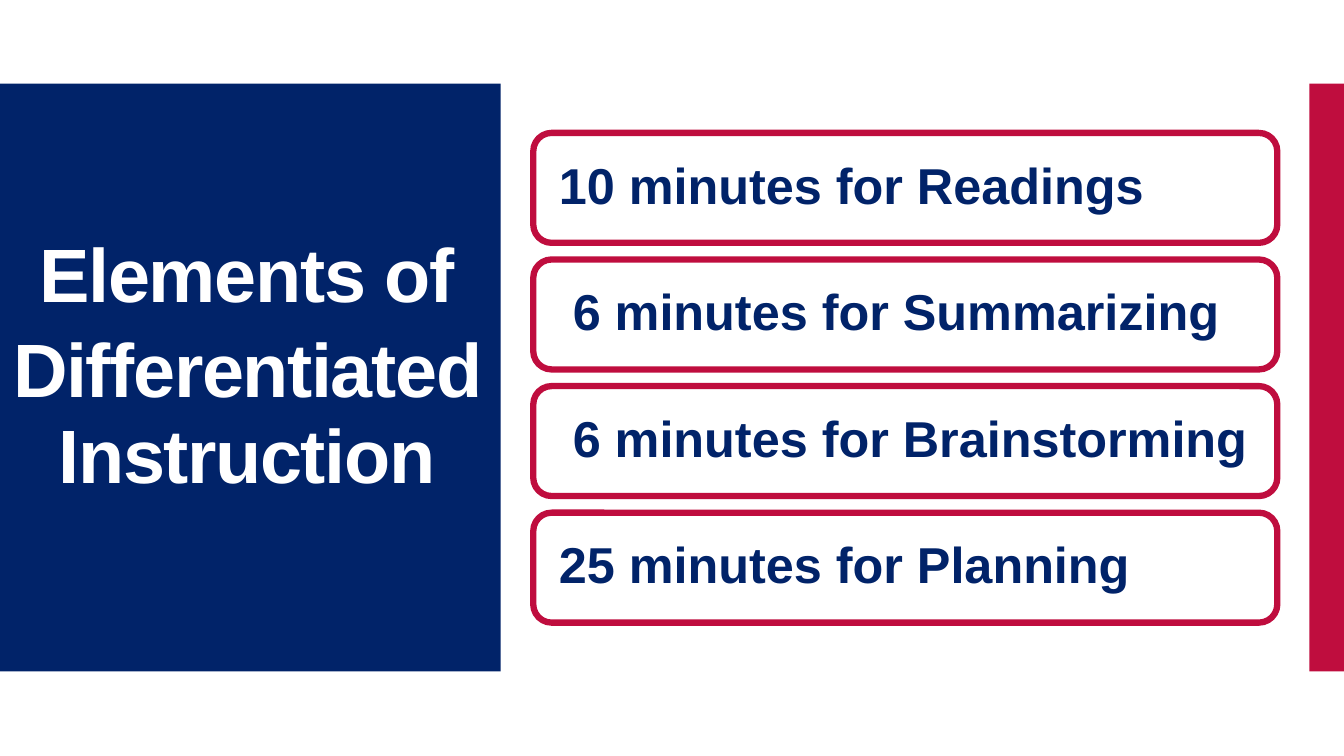
from pptx import Presentation
from pptx.dml.color import RGBColor
from pptx.enum.shapes import MSO_SHAPE as Shape
from pptx.enum.text import MSO_ANCHOR as Anchor, MSO_AUTO_SIZE as AutoSize, PP_ALIGN as Align
from pptx.util import Cm, Pt

NAVY = RGBColor(0x01, 0x23, 0x69)
RED = RGBColor(0xBF, 0x0D, 0x3E)
WHITE = RGBColor(0xFF, 0xFF, 0xFF)

TITLE_LINES = ["Elements of", "Differentiated Instruction"]
STEPS = [(10, "Readings"), (6, "Summarizing"), (6, "Brainstorming"), (25, "Planning")]

BAND_TOP, BAND_HEIGHT = 2.11, 14.81
CARD_LEFT, CARD_TOP, CARD_WIDTH, CARD_HEIGHT = 13.44, 3.35, 18.75, 2.77
CARD_PITCH = 3.19
CARD_INSET, SINGLE_DIGIT_INDENT = 0.51, 0.35


def add_block(page, kind, left, top, width, height, fill):
    block = page.shapes.add_shape(kind, Cm(left), Cm(top), Cm(width), Cm(height))
    block.shadow.inherit = False
    block.fill.solid()
    block.fill.fore_color.rgb = fill
    block.line.fill.background()
    return block


def format_para(para, size, color, align, spacing):
    para.alignment = align
    para.line_spacing = spacing
    for span in para.runs:
        span.font.name = "Arial"
        span.font.size = Pt(size)
        span.font.bold = True
        span.font.color.rgb = color


def add_card(page, row, minutes, task):
    card = add_block(page, Shape.ROUNDED_RECTANGLE, CARD_LEFT, CARD_TOP + row * CARD_PITCH,
                     CARD_WIDTH, CARD_HEIGHT, WHITE)
    card.line.color.rgb = RED
    card.line.width = Pt(4.5)
    frame = card.text_frame
    frame.word_wrap = True
    frame.vertical_anchor = Anchor.MIDDLE
    indent = SINGLE_DIGIT_INDENT if minutes < 10 else 0
    frame.margin_left = Cm(CARD_INSET + indent)
    frame.margin_right = Cm(0.3)
    frame.text = f"{minutes} minutes for {task}"
    format_para(frame.paragraphs[0], 36, NAVY, Align.LEFT, 0.9)


def set_title(title):
    title.left, title.top, title.width, title.height = Cm(0), Cm(3.71), Cm(12.45), Cm(9.04)
    frame = title.text_frame
    frame.text = "\n".join(TITLE_LINES)
    frame.word_wrap = True
    frame.auto_size = AutoSize.NONE
    frame.vertical_anchor = Anchor.BOTTOM
    for para in frame.paragraphs:
        format_para(para, 54, WHITE, Align.CENTER, 0.95)
        para.space_before = Pt(0)
        para.space_after = Pt(6)
        for span in para.runs:
            span.font._element.set("spc", "-100")
    title.element.getparent().append(title.element)


def main():
    deck = Presentation()
    deck.slide_width, deck.slide_height = Cm(33.87), Cm(19.05)
    page = deck.slides.add_slide(deck.slide_layouts[5])
    for row, (minutes, task) in enumerate(STEPS):
        add_card(page, row, minutes, task)
    add_block(page, Shape.RECTANGLE, 0, BAND_TOP, 12.62, BAND_HEIGHT, NAVY)
    set_title(page.shapes.title)
    add_block(page, Shape.RECTANGLE, 33, BAND_TOP, 0.87, BAND_HEIGHT, RED)
    deck.save("out.pptx")


if __name__ == "__main__":
    main()
